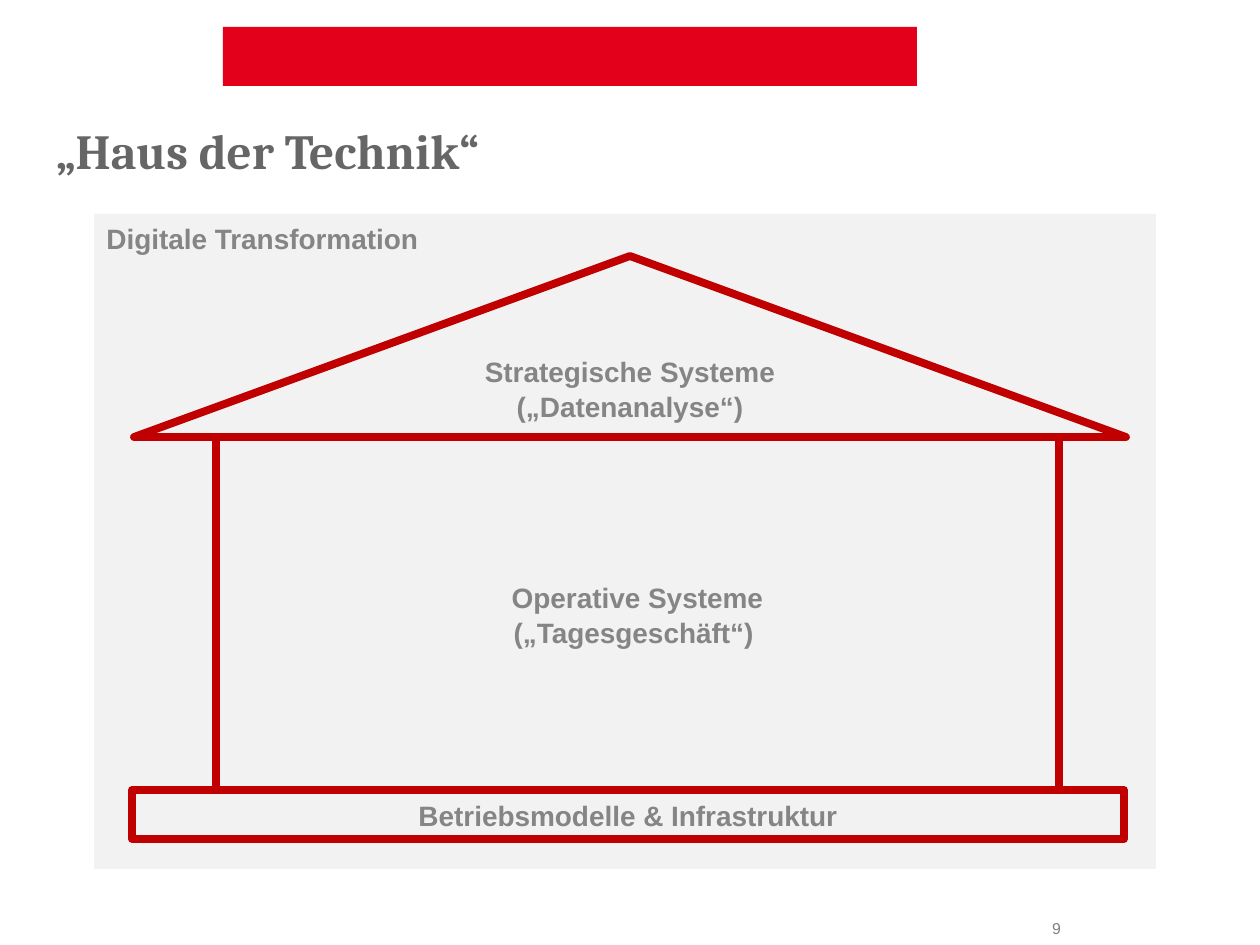
from pptx import Presentation
from pptx.dml.color import RGBColor
from pptx.enum.shapes import MSO_SHAPE
from pptx.enum.text import MSO_ANCHOR, PP_ALIGN
from pptx.util import Pt

PX = 914400 / 126
RED = RGBColor(0xE2, 0x00, 0x1A)
DARK_RED = RGBColor(0xC0, 0x00, 0x00)
LIGHT_GREY = RGBColor(0xF2, 0xF2, 0xF2)
TEXT_GREY = RGBColor(0x85, 0x85, 0x85)
TITLE_GREY = RGBColor(0x66, 0x66, 0x66)
NUMBER_GREY = RGBColor(0x80, 0x80, 0x80)
RECT, TRIANGLE = MSO_SHAPE.RECTANGLE, MSO_SHAPE.ISOSCELES_TRIANGLE
TOP, MIDDLE = MSO_ANCHOR.TOP, MSO_ANCHOR.MIDDLE
LEFT, CENTER, RIGHT = PP_ALIGN.LEFT, PP_ALIGN.CENTER, PP_ALIGN.RIGHT


def px(*lengths):
    return [round(length * PX) for length in lengths]


def write(frame, lines, size, color, font="Arial", bold=True, align=LEFT, anchor=TOP):
    frame.word_wrap = True
    frame.vertical_anchor = anchor
    for index, line in enumerate(lines):
        paragraph = frame.add_paragraph() if index else frame.paragraphs[0]
        paragraph.alignment = align
        run = paragraph.add_run()
        run.text = line
        run.font.name = font
        run.font.size = Pt(size)
        run.font.bold = bold
        run.font.color.rgb = color


prs = Presentation()
prs.slide_width, prs.slide_height = px(1260, 945)
slide = prs.slides.add_slide(prs.slide_layouts[6])
shapes = slide.shapes

# Page number
number = shapes.add_textbox(*px(997, 919, 64, 40)).text_frame
number.margin_left = number.margin_right = number.margin_top = number.margin_bottom = 0
write(number, ["9"], 9, NUMBER_GREY, bold=False, align=RIGHT)

# Red header bar, grey panel and the parts of the house, back to front
parts = [
    (RECT, (223, 27, 694, 59), RED, None, [], LEFT, TOP),
    (RECT, (94, 214, 1062, 655), LIGHT_GREY, None,
     ["Digitale Transformation"], LEFT, TOP),
    (RECT, (216, 437, 843, 354), LIGHT_GREY, DARK_RED,
     ["Operative Systeme", "(„Tagesgeschäft“) "], CENTER, MIDDLE),
    (TRIANGLE, (134, 256, 992, 181), LIGHT_GREY, DARK_RED,
     ["Strategische Systeme", "(„Datenanalyse“)"], CENTER, TOP),
    (RECT, (132, 790, 992, 49), LIGHT_GREY, DARK_RED,
     ["Betriebsmodelle & Infrastruktur"], CENTER, MIDDLE),
]
for kind, place, fill, outline, lines, align, anchor in parts:
    part = shapes.add_shape(kind, *px(*place))
    part.shadow.inherit = False
    part.fill.solid()
    part.fill.fore_color.rgb = fill
    if outline:
        part.line.color.rgb = outline
        part.line.width = Pt(4.5)
    else:
        part.line.fill.background()
    write(part.text_frame, lines, 16, TEXT_GREY, align=align, anchor=anchor)
    for paragraph in part.text_frame.paragraphs:
        paragraph.line_spacing = 1.05

# Title
title = shapes.add_textbox(*px(44, 125, 1191, 49)).text_frame
title.margin_top = title.margin_bottom = 0
write(title, ["„Haus der Technik“"], 28, TITLE_GREY, font="Cambria", anchor=MIDDLE)

prs.save("out.pptx")
